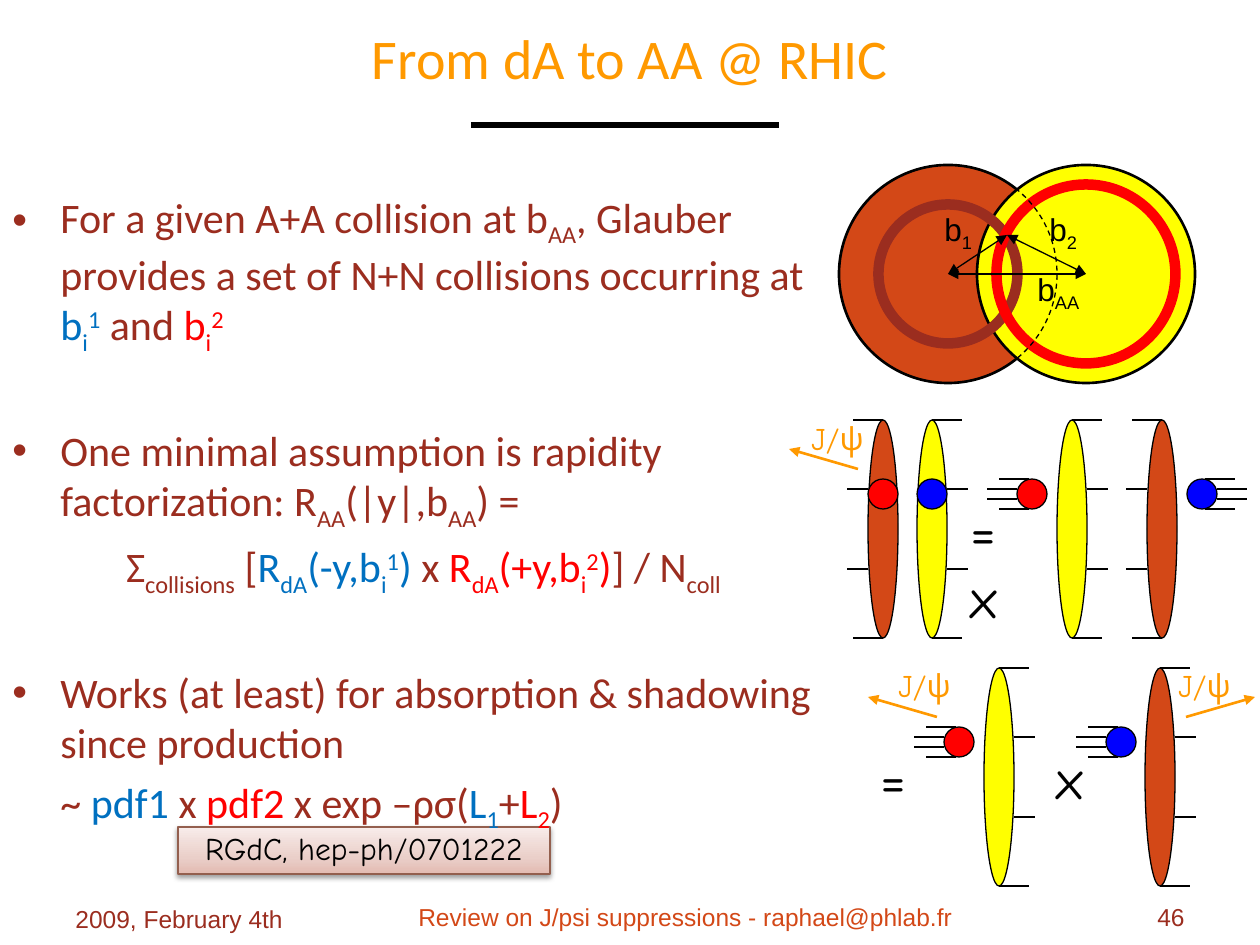
from copy import deepcopy

from lxml.etree import SubElement
from pptx import Presentation
from pptx.dml.color import RGBColor
from pptx.enum.dml import MSO_LINE
from pptx.enum.shapes import MSO_CONNECTOR, MSO_SHAPE
from pptx.enum.text import MSO_ANCHOR as Anchor, PP_ALIGN as Align
from pptx.oxml.ns import qn
from pptx.util import Emu, Pt

PX = 914400 / 126
BLACK = RGBColor(0x00, 0x00, 0x00)
ORANGE = RGBColor(0xFF, 0x99, 0x00)
RUST = RGBColor(0xD3, 0x48, 0x17)
MAROON = RGBColor(0x9B, 0x2D, 0x1F)
YELLOW = RGBColor(0xFF, 0xFF, 0x00)
RED = RGBColor(0xFF, 0x00, 0x00)
BLUE = RGBColor(0x00, 0x00, 0xFF)
AZURE = RGBColor(0x00, 0x70, 0xC0)
CITE_EDGE = RGBColor(0x93, 0x5F, 0x4E)
CITE_STOPS = [(0, RGBColor(0xE3, 0xBB, 0xB2)), (0.35, RGBColor(0xEA, 0xCF, 0xC9)),
              (1, RGBColor(0xF8, 0xEC, 0xEA))]
SUB, SUP = -25000, 30000
COMIC = "Comic Neue"
INDENT = 48

BODY = [
    ("bullet", 5, [("For a given A+A collision at b", MAROON, 0), ("AA", MAROON, SUB),
                   (", Glauber provides a set of N+N collisions occurring at ", MAROON, 0),
                   ("b", AZURE, 0), ("i", AZURE, SUB), ("1", AZURE, SUP),
                   (" and ", MAROON, 0),
                   ("b", RED, 0), ("i", RED, SUB), ("2", RED, SUP)]),
    ("bullet", 39, [("One minimal assumption is rapidity factorization: R", MAROON, 0),
                    ("AA", MAROON, SUB), ("(|y|,b", MAROON, 0),
                    ("AA", MAROON, SUB), (") =", MAROON, 0)]),
    ("formula", 5, [("Σ", MAROON, 0), ("collisions", MAROON, SUB), (" [", MAROON, 0),
                    ("R", AZURE, 0), ("dA", AZURE, SUB), ("(-y,b", AZURE, 0),
                    ("i", AZURE, SUB), ("1", AZURE, SUP), (") ", AZURE, 0),
                    ("x ", MAROON, 0), ("R", RED, 0), ("dA", RED, SUB),
                    ("(+y,b", RED, 0), ("i", RED, SUB), ("2", RED, SUP), (")", RED, 0),
                    ("] / N", MAROON, 0), ("coll", MAROON, SUB)]),
    ("bullet", 39, [("Works (at least) for absorption & shadowing since production", MAROON, 0)]),
    ("follow-on", 5, [("~ ", MAROON, 0), ("pdf1", AZURE, 0), (" x ", MAROON, 0),
                      ("pdf2", RED, 0), (" x exp –ρσ(", MAROON, 0), ("L", AZURE, 0),
                      ("1", AZURE, SUB), ("+", MAROON, 0), ("L", RED, 0),
                      ("2", RED, SUB), (")", MAROON, 0)]),
]


def px(length):
    return Emu(round(length * PX))


def add_runs(paragraph, runs, size, font):
    for words, color, baseline in runs:
        run = paragraph.add_run()
        run.text = words
        run.font.size = Pt(size)
        run.font.name = font
        run.font.color.rgb = color
        if baseline:
            run.font._element.set("baseline", str(baseline))


def add_text(slide, box, text, size=18, font="Arial", color=BLACK, align=Align.LEFT,
             anchor=Anchor.TOP, wrap=True, subscript=""):
    frame = slide.shapes.add_textbox(*map(px, box)).text_frame
    frame.word_wrap = wrap
    frame.vertical_anchor = anchor
    paragraph = frame.paragraphs[0]
    paragraph.alignment = align
    runs = [(text, color, 0)] + ([(subscript, color, SUB)] if subscript else [])
    add_runs(paragraph, runs, size, font)


def add_line(slide, start, end, color=BLACK, width=0.75, arrows=()):
    line = slide.shapes.add_connector(MSO_CONNECTOR.STRAIGHT, *map(px, start + end))
    line.line.color.rgb = color
    line.line.width = Pt(width)
    outline = line.line._get_or_add_ln()
    for arrow in arrows:
        SubElement(outline, qn(f"a:{arrow}"), type="triangle")
    SubElement(line._element.spPr, qn("a:effectLst"))


def add_oval(slide, center, size, fill=None, edge=BLACK, width=0.75, dashed=False):
    (x, y), (w, h) = center, size
    oval = slide.shapes.add_shape(MSO_SHAPE.OVAL, *map(px, (x - w / 2, y - h / 2, w, h)))
    oval.shadow.inherit = False
    if fill is None:
        oval.fill.background()
    else:
        oval.fill.solid()
        oval.fill.fore_color.rgb = fill
    oval.line.color.rgb = edge
    oval.line.width = Pt(width)
    if dashed:
        oval.line.dash_style = MSO_LINE.DASH


def add_nucleus(slide, x, top, fill, side):
    add_oval(slide, (x, top + 109), (30, 218), fill)
    for drop, near, far in [(0, 0, 30), (69, 15, 36), (149, 15, 36), (218, 0, 30)]:
        add_line(slide, (x + side * near, top + drop), (x + side * far, top + drop))


def add_nucleon(slide, x, y, fill, trail=0):
    if trail:
        for drop, near in [(-15, 3), (-5, 15), (5, 15), (15, 3)]:
            add_line(slide, (x + trail * near, y + drop), (x + trail * (near + 30), y + drop))
    add_oval(slide, (x, y), (30, 30), fill)


def add_jpsi(slide, label_at, tail, direction):
    x, y = tail
    add_line(slide, tail, (x + direction * 69, y - 20), ORANGE, 1.5, ["tailEnd"])
    add_text(slide, (*label_at, 81, 50), "J/ψ", font=COMIC, color=ORANGE, wrap=False)


def add_overlap(slide):
    left, right, meeting = (948, 274), (1086, 274), (1007, 235)
    add_oval(slide, left, (218, 218), RUST, width=1.5)
    add_oval(slide, right, (218, 218), YELLOW, width=1.5)
    add_oval(slide, left, (139, 139), edge=MAROON, width=6)
    add_oval(slide, right, (179, 179), edge=RED, width=6)
    for start, end in [(right, meeting), (meeting, left), (left, right)]:
        add_line(slide, start, end, arrows=["headEnd", "tailEnd"])
    for index, box in [("1", (932, 204, 54, 50)), ("2", (1037, 204, 54, 50)),
                       ("AA", (1025, 264, 71, 50))]:
        add_text(slide, box, "b", subscript=index, wrap=False)
    add_oval(slide, left, (218, 218), dashed=True)


def add_factorization(slide):
    for x, top, fill, side in [(932, 420, YELLOW, 1), (883, 420, RUST, -1),
                               (1072, 420, YELLOW, 1), (1162, 420, RUST, -1),
                               (999, 668, YELLOW, 1), (1160, 668, RUST, 1)]:
        add_nucleus(slide, x, top, fill, side)
    for x, y, fill, trail in [(883, 494, RED, 0), (932, 494, BLUE, 0),
                              (1032, 494, RED, -1), (1202, 494, BLUE, 1),
                              (959, 742, RED, -1), (1121, 742, BLUE, -1)]:
        add_nucleon(slide, x, y, fill, trail)
    for symbol, x, y in [("=", 958, 489), ("x", 958, 556), ("=", 868, 737), ("x", 1044, 737)]:
        add_text(slide, (x, y, 60, 79), symbol, size=32, font=COMIC)
    add_jpsi(slide, (799, 413), (858, 469), -1)
    add_jpsi(slide, (886, 660), (937, 717), -1)
    add_jpsi(slide, (1166, 660), (1186, 717), 1)


def add_body(slide):
    frame = slide.shapes.add_textbox(*map(px, (0, 185, 847, 633))).text_frame
    frame.word_wrap = True
    for number, (kind, gap, runs) in enumerate(BODY):
        paragraph = frame.add_paragraph() if number else frame.paragraphs[0]
        paragraph.space_before = Pt(gap)
        properties = paragraph._p.get_or_add_pPr()
        properties.set("marL", str(px(INDENT)))
        properties.set("indent", str(0 if kind == "follow-on" else -px(INDENT)))
        if kind == "bullet":
            SubElement(properties, qn("a:buFont"), typeface="Arial")
            SubElement(properties, qn("a:buChar"), char="•")
        if kind == "formula":
            paragraph.alignment = Align.CENTER
        add_runs(paragraph, runs, 24, "Calibri")


def add_citation(slide):
    box = (178, 827, 372, 47)
    plate = slide.shapes.add_shape(MSO_SHAPE.RECTANGLE, *map(px, box))
    plate.shadow.inherit = False
    plate.fill.gradient()
    plate.fill.gradient_angle = 90
    stops = plate.fill.gradient_stops
    first = stops[0]._gs
    first.addnext(deepcopy(first))
    for stop, (position, color) in zip(plate.fill.gradient_stops, CITE_STOPS):
        stop.position = position
        stop.color.rgb = color
    plate.line.color.rgb = CITE_EDGE
    plate.line.width = Pt(0.75)
    effects = plate._element.spPr.find(qn("a:effectLst"))
    shadow = SubElement(effects, qn("a:outerShdw"), blurRad=str(Pt(3.1)), dist=str(Pt(1.6)),
                        dir="5400000", rotWithShape="0")
    tint = SubElement(shadow, qn("a:srgbClr"), val=str(BLACK))
    SubElement(tint, qn("a:alpha"), val="38000")
    paragraph = plate.text_frame.paragraphs[0]
    paragraph.alignment = Align.CENTER
    paragraph.line_spacing = 0.9
    add_runs(paragraph, [("RGdC, hep-ph/0701222", BLACK, 0)], 18, COMIC)


def main():
    deck = Presentation()
    deck.slide_width, deck.slide_height = px(1260), px(945)
    slide = deck.slides.add_slide(deck.slide_layouts[6])
    add_text(slide, (63, 0, 1134, 115), "From dA to AA @ RHIC", size=32, font="Calibri",
             color=ORANGE, align=Align.CENTER, anchor=Anchor.MIDDLE)
    add_line(slide, (471, 125), (779, 125), width=3)
    add_overlap(slide)
    add_factorization(slide)
    add_citation(slide)
    add_body(slide)
    add_text(slide, (63, 898, 294, 37), "2009, February 4th", size=14, color=MAROON)
    add_text(slide, (315, 896, 741, 55), "Review on J/psi suppressions - raphael@phlab.fr",
             size=14, color=RUST, align=Align.CENTER)
    add_text(slide, (903, 896, 294, 37), "46", size=14, color=MAROON, align=Align.RIGHT)
    deck.save("out.pptx")


if __name__ == "__main__":
    main()
